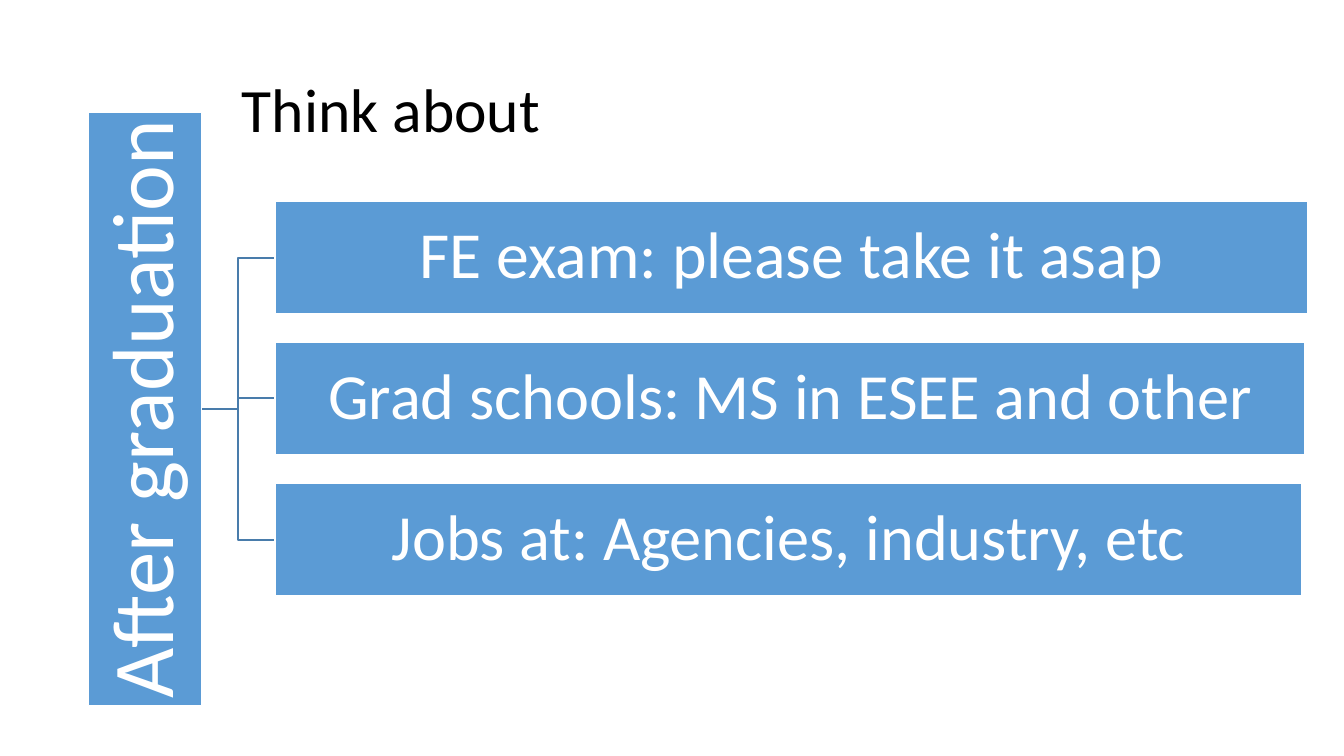
"""Build a slide with a vertical heading branching to three post-graduation topics."""
from pptx import Presentation, util as u
from pptx.dml.color import RGBColor
from pptx.enum import shapes, text

TITLE = "Think about"
ROOT = "After graduation"
TOPICS = [
    ("FE exam: please take it asap", 1033, 47),
    ("Grad schools: MS in ESEE and other", 1030, 46),
    ("Jobs at: Agencies, industry, etc", 1027, 46),
]
COLORS = {"title": "000000", "box": "5B9BD5", "white": "FFFFFF", "line": "497CAB"}
FONT = "Calibri"
PX = 914400 / 100.8
BOX_H = 113
ROOT_W, ROOT_CX, ROOT_CY = 593, 145, 409
TOPIC_X, TOPIC_Y, TOPIC_STEP = 275, 201, 141


def px(n):
    return u.Emu(round(n * PX))


def rgb(name):
    return RGBColor.from_string(COLORS[name])


def write(sp, words, size, color, align, inset):
    tf = sp.text_frame
    tf.word_wrap = True
    tf.vertical_anchor = text.MSO_ANCHOR.MIDDLE
    tf.margin_left = tf.margin_right = tf.margin_top = tf.margin_bottom = px(inset)
    p = tf.paragraphs[0]
    p.text = words
    p.alignment = align
    p.line_spacing = 0.9
    p.font.name = FONT
    p.font.size = u.Pt(size)
    p.font.color.rgb = rgb(color)


def add_box(s, words, x, y, w, size, inset):
    sp = s.shapes.add_shape(shapes.MSO_SHAPE.RECTANGLE, px(x), px(y), px(w), px(BOX_H))
    sp.shadow.inherit = False
    sp.fill.solid()
    sp.fill.fore_color.rgb = rgb("box")
    sp.line.color.rgb = rgb("white")
    sp.line.width = u.Pt(1)
    write(sp, words, size, "white", text.PP_ALIGN.CENTER, inset)
    return sp


def add_branch(s, y):
    start_x = ROOT_CX + BOX_H / 2
    mid_x = (start_x + TOPIC_X) / 2
    path = s.shapes.build_freeform(start_x, ROOT_CY, PX)
    path.add_line_segments([(mid_x, ROOT_CY), (mid_x, y), (TOPIC_X, y)], close=False)
    sp = path.convert_to_shape()
    sp.shadow.inherit = False
    sp.fill.background()
    sp.line.color.rgb = rgb("line")
    sp.line.width = u.Pt(1)


def main():
    prs = Presentation()
    prs.slide_width, prs.slide_height = px(1344), px(756)
    s = prs.slides.add_slide(prs.slide_layouts[6])

    title = s.shapes.add_textbox(px(232), px(40), px(1020), px(146))
    write(title, TITLE, 44, "title", text.PP_ALIGN.LEFT, 10)

    tops = [TOPIC_Y + i * TOPIC_STEP for i in range(len(TOPICS))]
    for y in reversed(tops):
        add_branch(s, y + BOX_H / 2)

    root = add_box(s, ROOT, ROOT_CX - ROOT_W / 2, ROOT_CY - BOX_H / 2, ROOT_W, 62, 4)
    root.rotation = 270

    for y, (words, w, size) in zip(tops, TOPICS):
        add_box(s, words, TOPIC_X, y, w, size, 3)

    prs.save("out.pptx")


if __name__ == "__main__":
    main()
